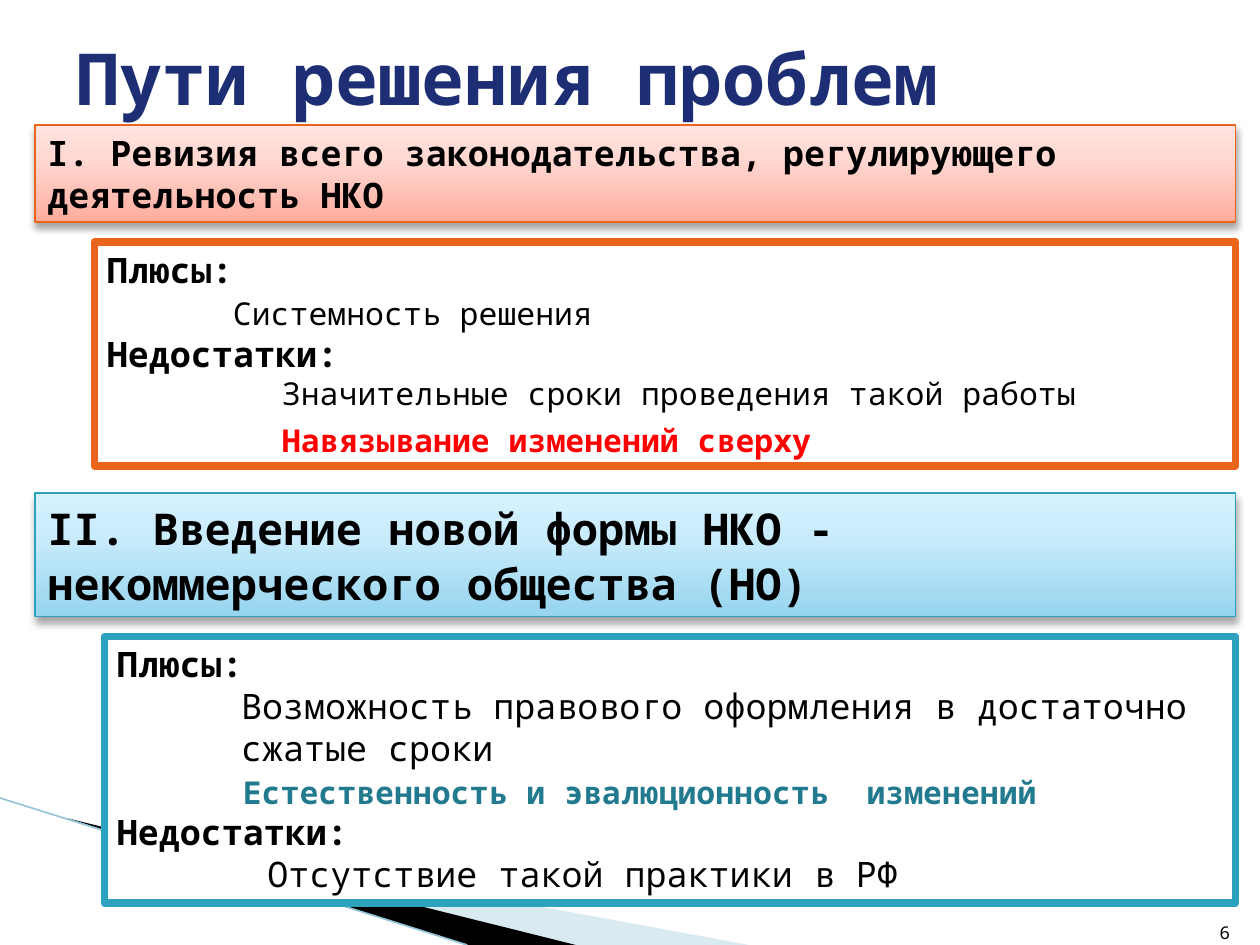
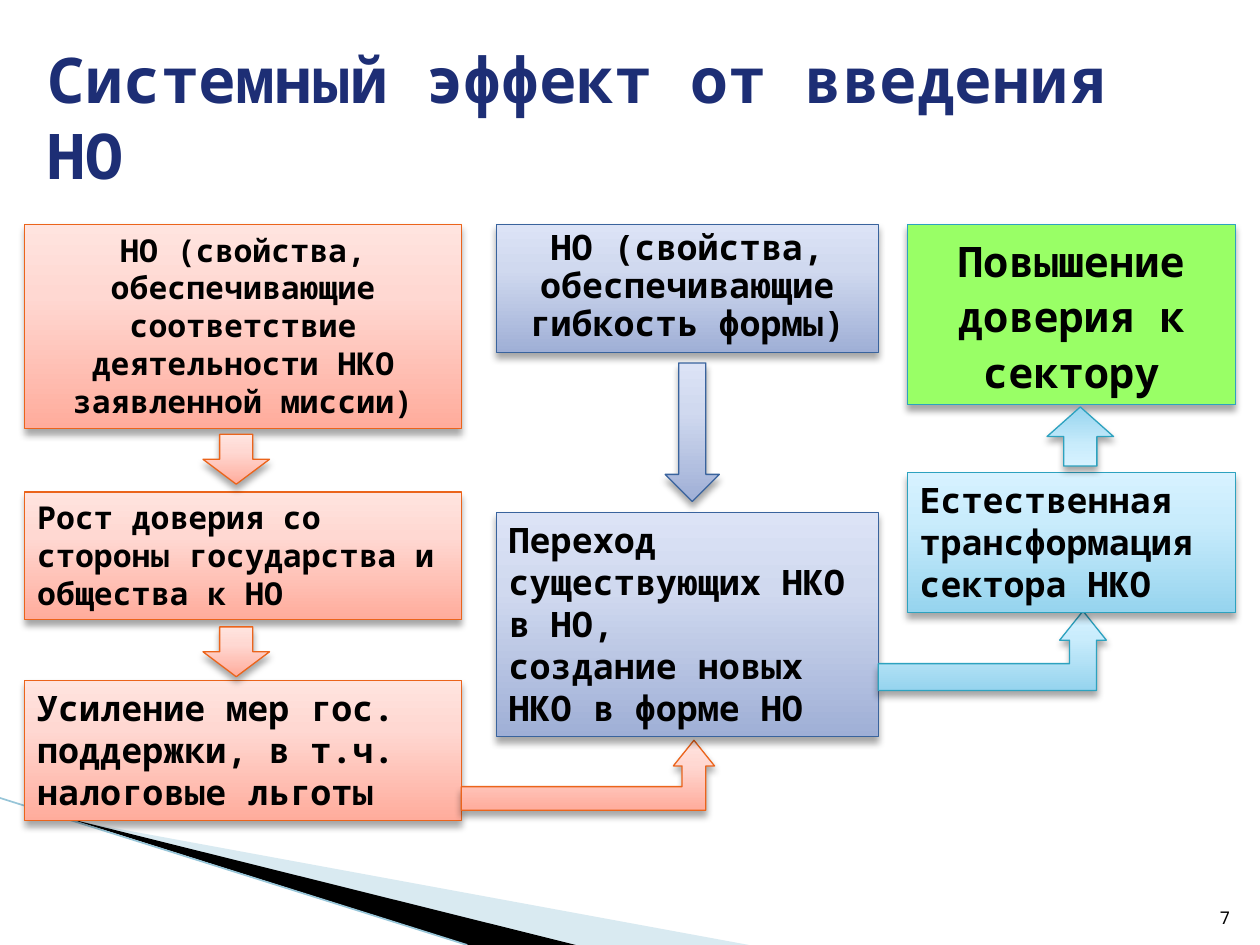
from copy import deepcopy

from lxml import etree
from pptx import Presentation
from pptx import util as u
from pptx.dml.color import RGBColor
from pptx.enum import shapes, text
from pptx.oxml.ns import qn

Pt = u.Pt
FONT = "Noto Sans Mono"
WIDTH, HEIGHT = 720, 540
COLORS = {
    "title": "1D2E75", "text": "000000", "panel": "FFFFFF", "goal": "99FF66",
    "warning": "FF0000", "benefit": "227A8F", "wedge": "A0CBDC",
    "edge": "97C5D8", "red": "EB641B", "blue": "39639D", "cyan": "2DA2BF",
}
GRADIENTS = {
    "red": ("FFAC9C", "FFD8D2", "FFE4DF"),
    "blue": ("9FAFD6", "D0D9EF", "DCE3F6"),
    "cyan": ("96D4EE", "C9ECFC", "D7F2FF"),
}
STOPS = (0, 0.65, 1)
ARROW = shapes.MSO_SHAPE.DOWN_ARROW
BENT_ARROW = shapes.MSO_SHAPE.BENT_UP_ARROW


def rgb(name):
    """Return the named colour."""
    return RGBColor.from_string(COLORS[name])


def pts(box):
    """Convert a sequence of points to lengths."""
    return [Pt(n) for n in box]


def style(p, size, color="text", bold=True, align=text.PP_ALIGN.LEFT):
    """Set the font and alignment of a paragraph."""
    p.alignment = align
    p.font.name, p.font.size, p.font.bold = FONT, Pt(size), bold
    p.font.color.rgb = rgb(color)


def add_shadow(sp):
    """Give a shape a soft shadow below it."""
    sp.shadow.inherit = False
    effects = sp._element.spPr.find(qn("a:effectLst"))
    shadow = etree.SubElement(effects, qn("a:outerShdw"), blurRad=str(Pt(4)),
                              dist=str(Pt(3)), dir="5400000", rotWithShape="0")
    color = etree.SubElement(shadow, qn("a:srgbClr"), val=COLORS["text"])
    etree.SubElement(color, qn("a:alpha"), val="35000")


def fill_gradient(sp, theme):
    """Fill a shape from dark at the bottom to light at the top."""
    sp.fill.gradient()
    sp.fill.gradient_angle = 90
    stops = sp._element.spPr.find(".//" + qn("a:gsLst"))
    stops.append(deepcopy(stops[0]))
    for stop, position, color in zip(sp.fill.gradient_stops, STOPS, GRADIENTS[theme]):
        stop.position = position
        stop.color.rgb = RGBColor.from_string(color)


def add_block(slide, box, theme, kind=shapes.MSO_SHAPE.RECTANGLE):
    """Add a shadowed gradient shape."""
    sp = slide.shapes.add_shape(kind, *pts(box))
    fill_gradient(sp, theme)
    sp.line.color.rgb, sp.line.width = rgb(theme), Pt(0.75)
    add_shadow(sp)
    return sp


def add_card(slide, box, theme, words, size, centered=False, spacing=1.0):
    """Add a gradient block with one bold paragraph."""
    sp = add_block(slide, box, theme)
    tf = sp.text_frame
    tf.word_wrap, tf.vertical_anchor = True, text.MSO_ANCHOR.TOP
    p = tf.paragraphs[0]
    p.text = words
    p.line_spacing = spacing
    style(p, size, align=text.PP_ALIGN.CENTER if centered else text.PP_ALIGN.LEFT)
    return sp


def add_bent_arrow(slide, box, theme):
    """Add an arrow that runs right and then turns up."""
    sp = add_block(slide, box, theme, BENT_ARROW)
    for i, value in enumerate((0.338, 0.294, 0.367)):
        sp.adjustments[i] = value


def add_panel(slide, box, theme, rows):
    """Add an outlined panel; rows give words, size, bold, colour, indent, gap."""
    sp = slide.shapes.add_shape(shapes.MSO_SHAPE.RECTANGLE, *pts(box))
    sp.shadow.inherit = False
    sp.fill.solid()
    sp.fill.fore_color.rgb = rgb("panel")
    sp.line.color.rgb, sp.line.width = rgb(theme), Pt(4.33)
    tf = sp.text_frame
    tf.word_wrap, tf.vertical_anchor = True, text.MSO_ANCHOR.TOP
    for i, (words, size, bold, color, indent, gap) in enumerate(rows):
        p = tf.add_paragraph() if i else tf.paragraphs[0]
        p.text = words
        pPr = p._p.get_or_add_pPr()
        pPr.set("marL", str(Pt(indent)))
        pPr.set("indent", "0")
        if gap:
            p.space_before = Pt(gap)
        style(p, size, color, bold)


def add_wedge(slide, points, color, alpha=100):
    """Add a filled triangle of the corner decoration."""
    builder = slide.shapes.build_freeform(*pts(points[0]), scale=1.0)
    builder.add_line_segments([pts(point) for point in points[1:]], close=True)
    sp = builder.convert_to_shape()
    sp.shadow.inherit = False
    sp.fill.solid()
    sp.fill.fore_color.rgb = rgb(color)
    sp.line.fill.background()
    srgb = sp._element.spPr.find(qn("a:solidFill")).find(qn("a:srgbClr"))
    etree.SubElement(srgb, qn("a:alpha"), val=str(alpha * 1000))


def add_corner(slide):
    """Draw the decoration in the lower left corner."""
    add_wedge(slide, [(39.6, 468.5), (428, HEIGHT), (328, HEIGHT)], "wedge", 40)
    add_wedge(slide, [(38.2, 467.5), (329, HEIGHT), (267.5, HEIGHT)], "text")
    edge = slide.shapes.add_connector(shapes.MSO_CONNECTOR.STRAIGHT,
                                      *pts((0, 456, 267, HEIGHT)))
    edge.line.color.rgb, edge.line.width = rgb("edge"), Pt(0.95)
    etree.SubElement(edge._element.spPr, qn("a:effectLst"))


def add_number(slide, box, number):
    """Add the slide number as a field."""
    tf = slide.shapes.add_textbox(*pts(box)).text_frame
    tf.word_wrap, tf.vertical_anchor = True, text.MSO_ANCHOR.BOTTOM
    p = tf.paragraphs[0]
    style(p, 10, bold=False, align=text.PP_ALIGN.RIGHT)
    field = etree.SubElement(p._p, qn("a:fld"), type="slidenum",
                             id="{B6F15528-21DE-4FAA-801E-634DDDAF4B2B}")
    etree.SubElement(field, qn("a:rPr"), lang="ru-RU", sz="1000")
    etree.SubElement(field, qn("a:t")).text = str(number)


def new_slide(prs, title, box, size, number, number_top):
    """Add a slide with its decoration, title and number."""
    slide = prs.slides.add_slide(prs.slide_layouts[5])
    add_corner(slide)
    sp = slide.shapes.title
    sp.left, sp.top, sp.width, sp.height = pts(box)
    tf = sp.text_frame
    tf.text = title
    tf.word_wrap, tf.auto_size = True, text.MSO_AUTO_SIZE.NONE
    tf.vertical_anchor = text.MSO_ANCHOR.MIDDLE
    style(tf.paragraphs[0], size, "title")
    add_number(slide, (681, number_top, 29, 29), number)
    return slide


def add_option(slide, box, theme, heading, size, spacing, heading_height, panel, rows):
    """Add a heading bar and, inset below it, its panel of pros and cons."""
    x, y, w, h = box
    inset, offset = panel
    add_card(slide, (x, y, w, heading_height), theme, heading, size, spacing=spacing)
    add_panel(slide, (x + inset, y + offset, w - inset, h - offset), theme, rows)


def solutions_slide(prs):
    """Build the slide that compares two solutions."""
    slide = new_slide(prs, "Пути решения проблем", (36.7, 9.4, 648, 68.4), 41, 6, 513.4)
    pros = ("Плюсы:", 20, True, "text", 0, 0)
    cons = ("Недостатки:", 20, True, "text", 0, 0)
    add_option(slide, (20, 71.5, 686, 195), "red",
               "I. Ревизия всего законодательства, регулирующего деятельность НКО",
               20, 1.0, 55.4, (34, 66.7), [
                   pros,
                   ("Системность решения", 18, False, "text", 72, 2.4),
                   cons,
                   ("Значительные сроки проведения такой работы", 18, False, "text", 100, 0),
                   ("Навязывание изменений сверху", 18, True, "warning", 100, 5)])
    add_option(slide, (20, 281.7, 686, 234.5), "cyan",
               "II. Введение новой формы НКО - некоммерческого общества (НО)",
               25, 1.05, 70.8, (39.7, 82), [
                   pros,
                   ("Возможность правового оформления в достаточно сжатые сроки",
                    20, False, "text", 71, 0),
                   ("Естественность и эвалюционность  изменений", 18, True, "benefit", 72, 2.4),
                   cons,
                   ("Отсутствие такой практики в РФ", 20, False, "text", 86, 0)])


def trust_column(slide, box):
    """Add the red chain from properties to state support."""
    x, y, w = box
    cards = [
        (0, 116.5, "НО (свойства, обеспечивающие соответствие деятельности НКО "
                   "заявленной миссии)", 18, True),
        (153, 72.8, "Рост доверия со стороны государства и общества к НО", 18, False),
        (260.6, 80, "Усиление мер гос. поддержки, в т.ч. налоговые льготы", 20, False),
    ]
    for top, height, words, size, centered in cards:
        add_card(slide, (x, y + top, w, height), "red", words, size, centered)
    for top in (120, 230):
        add_block(slide, (x + 101.8, y + top, 38, 28.5), "red", ARROW)
    add_bent_arrow(slide, (x + w, y + 294.8, 144.7, 40), "red")


def form_column(slide, box):
    """Add the blue step from flexible form to transition."""
    x, y, w = box
    add_card(slide, (x, y, w, 73.4), "blue",
             "НО (свойства, обеспечивающие гибкость формы)", 20, True, 0.9)
    add_block(slide, (x + 96.5, y + 79.2, 31, 79.2), "blue", ARROW)
    add_card(slide, (x, y + 164.5, w, 128.2), "blue",
             "Переход существующих НКО в НО,\nсоздание новых НКО в форме НО", 20)
    add_bent_arrow(slide, (x + w, y + 221, 130.3, 45.4), "cyan")


def sector_column(slide, box):
    """Add the cyan step that leads up to the goal."""
    x, y, w = box
    add_card(slide, (x, y + 141.8, w, 80), "cyan", "Естественная трансформация сектора НКО", 20)
    goal = add_card(slide, (x, y, w, 103), "cyan", "Повышение доверия к сектору", 24, True, 1.1)
    goal.fill.solid()
    goal.fill.fore_color.rgb = rgb("goal")
    arrow = add_block(slide, (x + 79.9, y + 104.4, 38, 33.8), "cyan", ARROW)
    arrow._element.spPr.find(qn("a:xfrm")).set("flipV", "1")


def effect_slide(prs):
    """Build the slide with three linked columns."""
    slide = new_slide(prs, "Системный эффект от введения НО", (20, 21.6, 664, 90), 36, 7, 504.7)
    top = 128.2
    trust_column(slide, (14.2, top, 249.4))
    form_column(slide, (283.6, top, 218.3))
    sector_column(slide, (518.4, top, 187.5))


def main():
    """Build and save the presentation."""
    prs = Presentation()
    prs.slide_width, prs.slide_height = Pt(WIDTH), Pt(HEIGHT)
    prs.element.set("firstSlideNum", "6")
    solutions_slide(prs)
    effect_slide(prs)
    prs.save("out.pptx")


if __name__ == "__main__":
    main()
